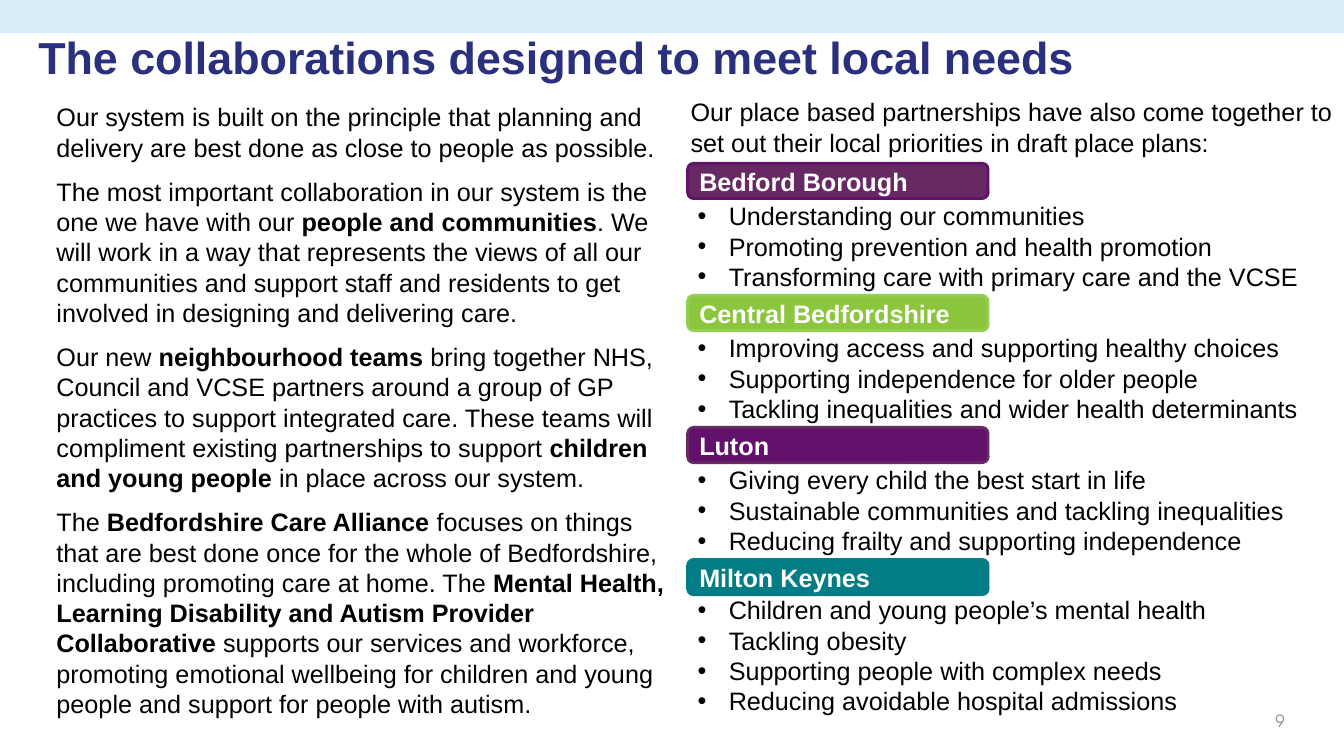
from pptx import Presentation
from pptx.dml.color import RGBColor as Rgb
from pptx.enum.shapes import MSO_SHAPE as Shape
from pptx.enum.text import MSO_ANCHOR as Anchor, MSO_AUTO_SIZE as Auto, PP_ALIGN as Align
from pptx.oxml.ns import qn
from pptx.util import Inches, Pt
from lxml.etree import SubElement as Sub

COLOURS = {
    "black": "000000", "white": "FFFFFF", "navy": "2B307E", "grey": "8C8C8C",
    "sky": "D7EDF8", "plum": "662964", "purple": "61116A",
    "green": "8CC63E", "lime": "92D050", "teal": "027D85",
}

STORY = [
    "Our system is built on the principle that planning and delivery are best done "
    "as close to people as possible.",
    "The most important collaboration in our system is the one we have with our "
    "*people and communities*. We will work in a way that represents the views of all our "
    "communities and support staff and residents to get involved in designing and "
    "delivering care.",
    "Our new *neighbourhood teams *bring together NHS, Council and VCSE partners around "
    "a group of GP practices to support integrated care. These teams will compliment "
    "existing partnerships to support *children and young people *in place across our system.",
    "The *Bedfordshire Care Alliance *focuses on things that are best done once for the "
    "whole of Bedfordshire, including promoting care at home. The *Mental Health, Learning "
    "Disability and Autism Provider Collaborative *supports our services and workforce, "
    "promoting emotional wellbeing for children and young people and support for people "
    "with autism.",
]

INTRO = ["Our place based partnerships have also come together to set out their local "
         "priorities in draft place plans:"]

PLACES = [
    ("Bedford Borough", "plum", "purple", [
        "Understanding our communities",
        "Promoting prevention and health promotion",
        "Transforming care with primary care and the VCSE"]),
    ("Central Bedfordshire", "green", "lime", [
        "Improving access and supporting healthy choices",
        "Supporting independence for older people",
        "Tackling inequalities and wider health determinants"]),
    ("Luton", "purple", "plum", [
        "Giving every child the best start in life",
        "Sustainable communities and tackling inequalities",
        "Reducing frailty and supporting independence"]),
    ("Milton Keynes", "teal", "teal", [
        "Children and young people’s mental health",
        "Tackling obesity",
        "Supporting people with complex needs",
        "Reducing avoidable hospital admissions"]),
]


def paint(name):
    return Rgb.from_string(COLOURS[name])


def place(shape, left, top, width, height):
    shape.left, shape.top = Inches(left), Inches(top)
    shape.width, shape.height = Inches(width), Inches(height)


def mark(para, bullet):
    props = para._p.get_or_add_pPr()
    indent = Inches(0.31) if bullet else 0
    props.set("marL", str(indent))
    props.set("indent", str(-indent))
    if bullet:
        Sub(props, qn("a:buFont"), typeface="Arial")
        Sub(props, qn("a:buChar"), char="•")
    else:
        Sub(props, qn("a:buNone"))


def write(shape, lines, size=18, font="Arial", colour="black", bold=False,
          align=Align.LEFT, anchor=Anchor.TOP, after=0, pitch=None, bullet=False):
    frame = shape.text_frame
    frame.word_wrap = True
    frame.auto_size = Auto.NONE
    frame.vertical_anchor = anchor
    for row, line in enumerate(lines):
        para = frame.add_paragraph() if row else frame.paragraphs[0]
        mark(para, bullet)
        para.alignment = align
        para.space_before, para.space_after = Pt(0), Pt(after)
        if pitch:
            para.line_spacing = Pt(pitch)
        for part, text in enumerate(line.split("*")):
            run = para.add_run()
            run.text = text
            run.font.size, run.font.name = Pt(size), font
            run.font.bold = bold or part % 2 == 1
            run.font.color.rgb = paint(colour)


def add_box(slide, spot, lines, **style):
    box = slide.shapes.add_textbox(*map(Inches, spot))
    write(box, lines, **style)


def add_block(slide, kind, spot, fill, line=None):
    block = slide.shapes.add_shape(kind, *map(Inches, spot))
    block.shadow.inherit = False
    block.fill.solid()
    block.fill.fore_color.rgb = paint(fill)
    if line:
        block.line.color.rgb = paint(line)
        block.line.width = Pt(2)
    else:
        block.line.fill.background()
    return block


def add_plan(slide, top, name, fill, line, aims):
    spot = (6.82, top + 0.31, 6.2, 0.24 + 0.26 * len(aims))
    add_box(slide, spot, aims, anchor=Anchor.MIDDLE, pitch=21.6, bullet=True)
    badge = add_block(slide, Shape.ROUNDED_RECTANGLE, (6.82, top, 2.98, 0.35), fill, line)
    write(badge, [name], colour="white", bold=True, anchor=Anchor.MIDDLE)


def main():
    deck = Presentation()
    deck.slide_width, deck.slide_height = Inches(13.33), Inches(7.5)
    slide = deck.slides.add_slide(deck.slide_layouts[3])
    title, story, intro = slide.placeholders

    add_block(slide, Shape.RECTANGLE, (0, 0, 13.33, 0.33), "sky")
    place(title, 0.28, 0.11, 12.28, 0.91)
    write(title, ["The collaborations designed to meet local needs"], size=32,
          colour="navy", bold=True, anchor=Anchor.MIDDLE)
    place(story, 0.46, 0.96, 6.28, 6.28)
    write(story, STORY, after=10, pitch=21.6)
    place(intro, 6.75, 0.91, 6.67, 0.71)
    write(intro, INTRO, after=10, pitch=21.6)

    for row, plan in enumerate(PLACES):
        add_plan(slide, 1.62 + 1.31 * row, *plan)

    add_box(slide, (9.56, 6.95, 3.28, 0.4), ["9"], size=12, font="TeX Gyre Adventor",
            colour="grey", align=Align.RIGHT, anchor=Anchor.MIDDLE)
    deck.save("out.pptx")


if __name__ == "__main__":
    main()
